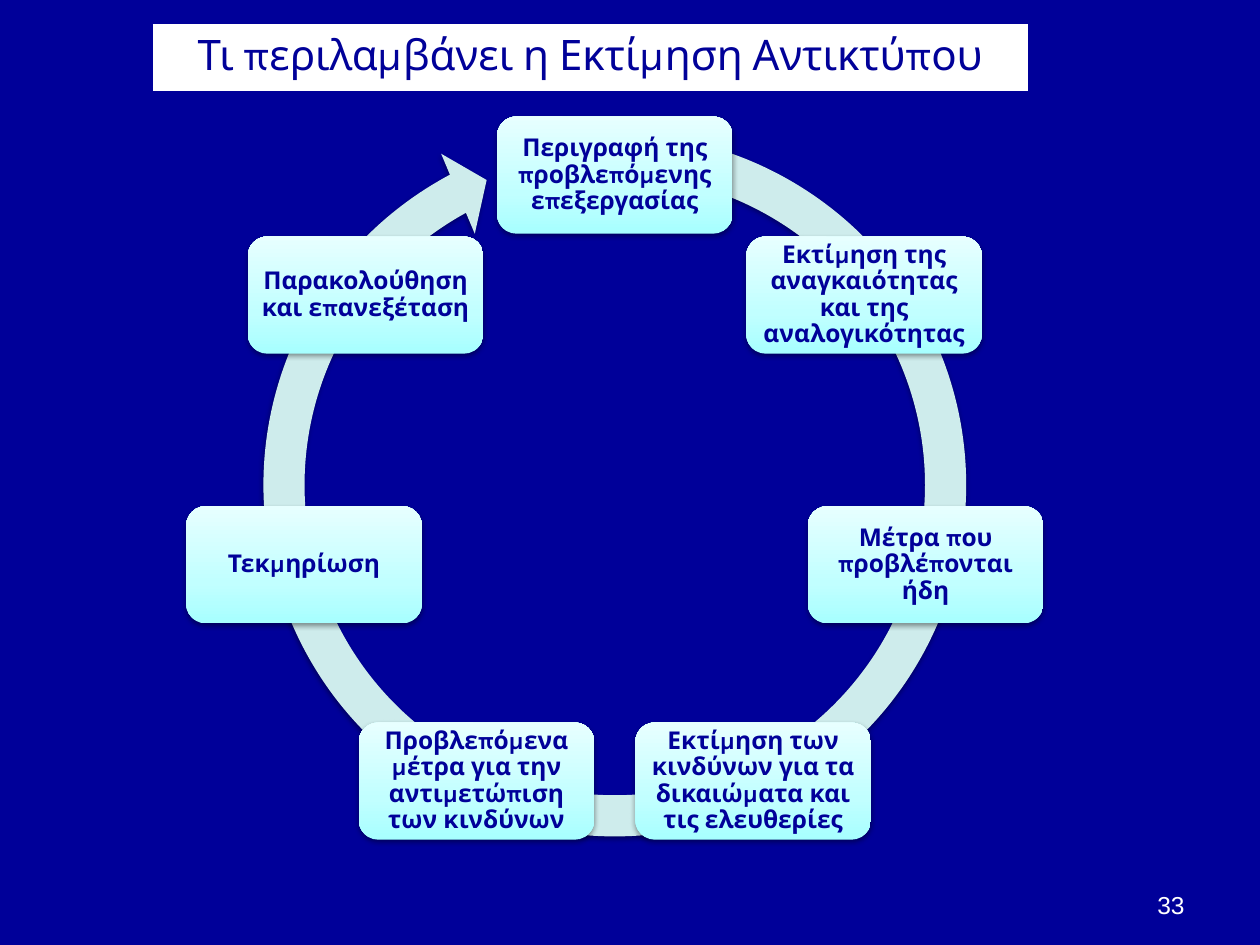
import copy
import math
from dataclasses import dataclass

import pptx
import pptx.dml.color
import pptx.enum.shapes
import pptx.enum.text
import pptx.oxml
import pptx.oxml.ns
import pptx.util
from pptx.util import Inches

SHAPE = pptx.enum.shapes.MSO_SHAPE
ALIGN = pptx.enum.text.PP_ALIGN
ANCHOR = pptx.enum.text.MSO_ANCHOR


@dataclass(frozen=True)
class Theme:
    background: str = "000099"
    ink: str = "010199"
    white: str = "FFFFFF"
    ring: str = "CEECEC"
    step_stops: tuple = ((0, "A7FFFF"), (0.35, "C1FFFF"), (1, "E7FFFF"))
    font: str = "Karla"
    number_font: str = "Arial"
    title_size: int = 24
    body_size: int = 14


THEME = Theme()
TITLE = "Τι περιλαμβάνει η Εκτίμηση Αντικτύπου"
STEPS = [
    "Περιγραφή της προβλεπόμενης επεξεργασίας",
    "Εκτίμηση της αναγκαιότητας και της αναλογικότητας",
    "Μέτρα που προβλέπονται ήδη",
    "Εκτίμηση των κινδύνων για τα δικαιώματα και τις ελευθερίες",
    "Προβλεπόμενα μέτρα για την αντιμετώπιση των κινδύνων",
    "Τεκμηρίωση",
    "Παρακολούθηση και επανεξέταση",
]
CENTER_X, CENTER_Y, RADIUS = 4.88, 3.92, 2.53
STEP_WIDTH, STEP_HEIGHT = 1.87, 0.93
RING_SIZE = 5.94


def rgb(color):
    return pptx.dml.color.RGBColor.from_string(color)


def write(frame, text, size, color, font, align, bold=False):
    para = frame.paragraphs[0]
    para.text = text
    para.alignment = align
    para.font.size = pptx.util.Pt(size)
    para.font.name = font
    para.font.bold = bold
    para.font.color.rgb = rgb(color)
    return para


def set_margins(holder, side, end):
    holder.margin_left = holder.margin_right = Inches(side)
    holder.margin_top = holder.margin_bottom = Inches(end)


def add_soft_shadow(shape):
    shape.shadow.inherit = False
    effects = shape._element.spPr.find(pptx.oxml.ns.qn("a:effectLst"))
    effects.append(pptx.oxml.parse_xml(
        f'<a:outerShdw {pptx.oxml.ns.nsdecls("a")} blurRad="40000" dist="20000" '
        'dir="5400000" rotWithShape="0"><a:srgbClr val="000000">'
        '<a:alpha val="38000"/></a:srgbClr></a:outerShdw>'))


def fill_gradient(shape, stops):
    shape.fill.gradient()
    shape.fill.gradient_angle = 90
    stop_list = shape._element.spPr.find(".//" + pptx.oxml.ns.qn("a:gsLst"))
    stop_list.append(copy.deepcopy(stop_list[0]))
    for stop, (position, color) in zip(shape.fill.gradient_stops, stops):
        stop.position = position
        stop.color.rgb = rgb(color)


def add_ring(page):
    ring = page.shapes.add_shape(
        SHAPE.CIRCULAR_ARROW, Inches(CENTER_X - RING_SIZE / 2),
        Inches(0.88), Inches(RING_SIZE), Inches(RING_SIZE))
    for index, value in enumerate((0.055, 3.307, 145.02, 169.581, 0.058)):
        ring.adjustments[index] = value
    ring.fill.solid()
    ring.fill.fore_color.rgb = rgb(THEME.ring)
    ring.line.fill.background()
    add_soft_shadow(ring)


def add_step(page, text, angle):
    """Place one step on the circle, at an angle clockwise from the top."""
    x = CENTER_X + RADIUS * math.sin(angle)
    y = CENTER_Y - RADIUS * math.cos(angle)
    step = page.shapes.add_shape(
        SHAPE.ROUNDED_RECTANGLE, Inches(x - STEP_WIDTH / 2),
        Inches(y - STEP_HEIGHT / 2), Inches(STEP_WIDTH), Inches(STEP_HEIGHT))
    fill_gradient(step, THEME.step_stops)
    step.line.fill.background()
    add_soft_shadow(step)
    frame = step.text_frame
    frame.word_wrap = True
    frame.vertical_anchor = ANCHOR.MIDDLE
    set_margins(frame, 0.06, 0.06)
    para = write(frame, text, THEME.body_size, THEME.ink, THEME.font,
                 ALIGN.CENTER, bold=True)
    para.line_spacing = 0.9


def add_title_table(page):
    table = page.shapes.add_table(
        1, 1, Inches(1.22), Inches(0.2), Inches(6.93), Inches(0.5)).table
    cell = table.cell(0, 0)
    set_margins(cell, 0.1, 0.02)
    cell.vertical_anchor = ANCHOR.MIDDLE
    write(cell.text_frame, TITLE, THEME.title_size, THEME.ink, THEME.font,
          ALIGN.CENTER)
    properties = cell._tc.get_or_add_tcPr()
    for side, points in (("L", 1), ("R", 1), ("T", 1), ("B", 3)):
        properties.append(pptx.oxml.parse_xml(
            f'<a:ln{side} {pptx.oxml.ns.nsdecls("a")} w="{pptx.util.Pt(points)}">'
            f'<a:solidFill><a:srgbClr val="{THEME.white}"/></a:solidFill>'
            f'</a:ln{side}>'))
    cell.fill.solid()
    cell.fill.fore_color.rgb = rgb(THEME.white)


def add_page_number(page, number):
    box = page.shapes.add_textbox(
        Inches(7.17), Inches(6.83), Inches(2.33), Inches(0.52))
    frame = box.text_frame
    frame.word_wrap = True
    frame.vertical_anchor = ANCHOR.BOTTOM
    write(frame, number, THEME.body_size, THEME.white, THEME.number_font,
          ALIGN.RIGHT)


def main():
    deck = pptx.Presentation()
    deck.slide_width, deck.slide_height = Inches(10), Inches(7.5)
    page = deck.slides.add_slide(deck.slide_layouts.get_by_name("Blank"))
    page.background.fill.solid()
    page.background.fill.fore_color.rgb = rgb(THEME.background)
    add_page_number(page, "33")
    add_ring(page)
    for index, text in enumerate(STEPS):
        add_step(page, text, index * math.tau / len(STEPS))
    add_title_table(page)
    deck.save("out.pptx")


if __name__ == "__main__":
    main()
